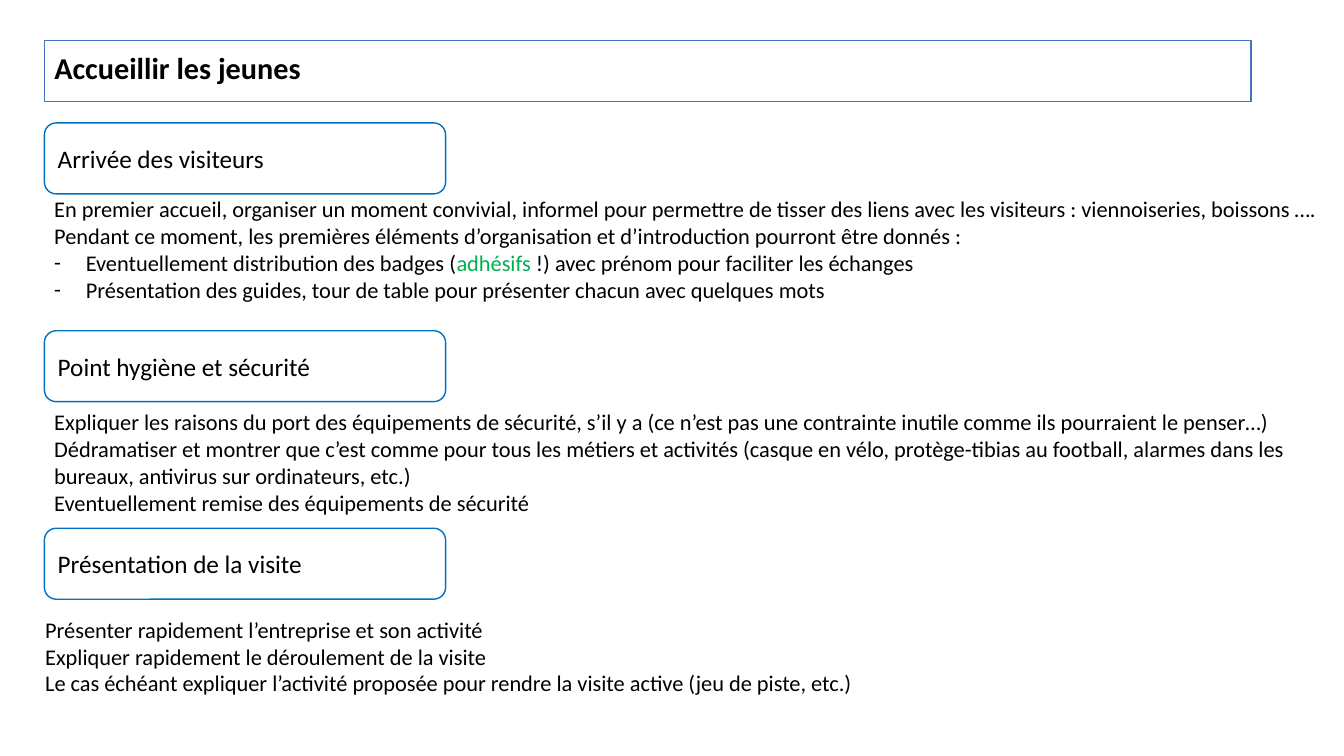
from dataclasses import dataclass

from pptx import Presentation
from pptx.dml.color import RGBColor
from pptx.enum.shapes import MSO_SHAPE
from pptx.enum.text import MSO_ANCHOR, MSO_AUTO_SIZE, PP_ALIGN
from pptx.oxml.ns import qn
from pptx.util import Pt
from lxml.etree import SubElement

BLACK = RGBColor(0x00, 0x00, 0x00)
WHITE = RGBColor(0xFF, 0xFF, 0xFF)
GREEN = RGBColor(0x00, 0xB0, 0x50)
BLUE = RGBColor(0x00, 0x70, 0xC0)
TITLE_BLUE = RGBColor(0x44, 0x72, 0xC4)

FONT = "Calibri"
LEFT = 31.7
HEADING_W, HEADING_H = 286.6, 50.7
BODY_W = 923.8
DASH_INDENT = 22.5


@dataclass(frozen=True)
class Line:
    pieces: tuple[str, ...]  # every second piece is highlighted
    dashed: bool = False


@dataclass(frozen=True)
class Section:
    heading: str
    heading_top: float
    body_left: float
    body_top: float
    body_height: float
    lines: tuple[Line, ...]


SECTIONS = (
    Section("Arrivée des visiteurs", 87.8, LEFT, 136.1, 85, (
        Line(("En premier accueil, organiser un moment convivial, informel pour permettre "
              "de tisser des liens avec les visiteurs : viennoiseries, boissons ….",)),
        Line(("Pendant ce moment, les premières éléments d’organisation et d’introduction "
              "pourront être donnés :",)),
        Line(("Eventuellement distribution des badges (", "adhésifs",
              " !) avec prénom pour faciliter les échanges"), dashed=True),
        Line(("Présentation des guides, tour de table pour présenter chacun avec "
              "quelques mots",), dashed=True),
    )),
    Section("Point hygiène et sécurité", 236.2, LEFT, 288, 85, (
        Line(("Expliquer les raisons du port des équipements de sécurité, s’il y a (ce n’est "
              "pas une contrainte inutile comme ils pourraient le penser…)",)),
        Line(("Dédramatiser et montrer que c’est comme pour tous les métiers et activités "
              "(casque en vélo, protège-tibias au football, alarmes dans les bureaux, "
              "antivirus sur ordinateurs, etc.)",)),
        Line(("Eventuellement remise des équipements de sécurité",)),
    )),
    Section("Présentation de la visite", 377.3, 25.2, 436.3, 65.5, (
        Line(("Présenter rapidement l’entreprise et son activité",)),
        Line(("Expliquer rapidement le déroulement de la visite",)),
        Line(("Le cas échéant expliquer l’activité proposée pour rendre la visite active "
              "(jeu de piste, etc.)",)),
    )),
)


def style_run(r, size: float, color: RGBColor = BLACK, bold: bool = False) -> None:
    r.font.name = FONT
    r.font.size = Pt(size)
    r.font.bold = bold
    r.font.color.rgb = color


def add_box(slide, kind: MSO_SHAPE, top: float, width: float, height: float,
            line: RGBColor, text: str, size: float, bold: bool = False):
    sp = slide.shapes.add_shape(kind, Pt(LEFT), Pt(top), Pt(width), Pt(height))
    sp.shadow.inherit = False
    sp.fill.solid()
    sp.fill.fore_color.rgb = WHITE
    sp.line.color.rgb = line
    sp.line.width = Pt(1)
    tf = sp.text_frame
    tf.word_wrap = True
    tf.vertical_anchor = MSO_ANCHOR.MIDDLE
    p = tf.paragraphs[0]
    p.text = text
    p.alignment = PP_ALIGN.LEFT
    style_run(p.runs[0], size, bold=bold)
    return sp


def add_dash(p) -> None:
    pPr = p._p.get_or_add_pPr()
    pPr.set("marL", str(Pt(DASH_INDENT)))
    pPr.set("indent", str(-Pt(DASH_INDENT)))
    SubElement(pPr, qn("a:buFont")).set("typeface", FONT)
    SubElement(pPr, qn("a:buChar")).set("char", "-")


def add_body(slide, section: Section) -> None:
    sp = slide.shapes.add_textbox(Pt(section.body_left), Pt(section.body_top),
                                  Pt(BODY_W), Pt(section.body_height))
    tf = sp.text_frame
    tf.word_wrap = True
    tf.auto_size = MSO_AUTO_SIZE.SHAPE_TO_FIT_TEXT
    for i, line in enumerate(section.lines):
        p = tf.add_paragraph() if i else tf.paragraphs[0]
        if line.dashed:
            add_dash(p)
        for j, piece in enumerate(line.pieces):
            r = p.add_run()
            r.text = piece
            style_run(r, 16, GREEN if j % 2 else BLACK)


def main() -> None:
    prs = Presentation()
    prs.slide_width, prs.slide_height = Pt(960), Pt(540)
    slide = prs.slides.add_slide(prs.slide_layouts[6])

    # Title bar
    title = add_box(slide, MSO_SHAPE.RECTANGLE, 28.8, 862, 43.9, TITLE_BLUE,
                    "Accueillir les jeunes", 21.6, bold=True)
    title.text_frame.paragraphs[0].line_spacing = 0.9
    title.text_frame.margin_bottom = Pt(6)

    # Headed sections
    for section in SECTIONS:
        add_body(slide, section)
        add_box(slide, MSO_SHAPE.ROUNDED_RECTANGLE, section.heading_top,
                HEADING_W, HEADING_H, BLUE, section.heading, 18)

    prs.save("out.pptx")


if __name__ == "__main__":
    main()
